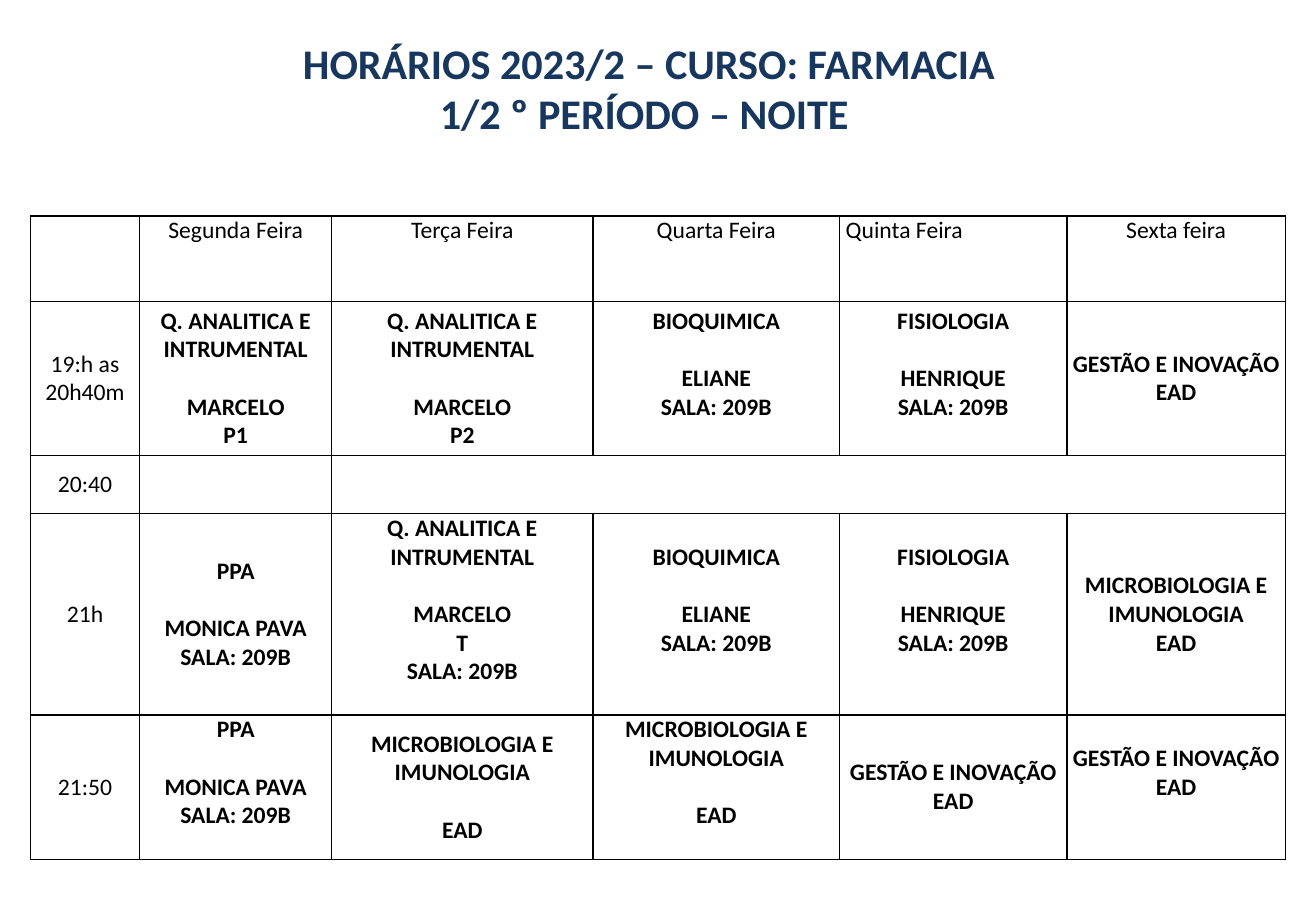
from lxml import etree
from pptx import Presentation
from pptx.dml.color import RGBColor
from pptx.enum.text import MSO_ANCHOR, MSO_AUTO_SIZE, PP_ALIGN
from pptx.oxml.ns import qn
from pptx.util import Inches, Pt

LEFT, CENTER = PP_ALIGN.LEFT, PP_ALIGN.CENTER
TOP, MIDDLE = MSO_ANCHOR.TOP, MSO_ANCHOR.MIDDLE
NO_AUTOFIT = MSO_AUTO_SIZE.NONE

THEME = {
    "font": "Calibri",
    "title_color": "17375E",
    "text_color": "000000",
    "border_color": "000000",
    "title_size": Pt(25),
    "cell_size": Pt(14),
    "border_width": Pt(1),
    "line_gap": Pt(17),
}

COLUMN_WIDTHS = [0.9, 1.58, 2.15, 2.03, 1.87, 1.8]
ROW_HEIGHTS = [0.7, 1.27, 0.48, 1.65, 1.19]

# Recurring classes; a double line break separates subject and teacher
ANALITICA = "Q. ANALITICA E INTRUMENTAL\n\nMARCELO\n"
BIOQUIMICA = "BIOQUIMICA\n\nELIANE\nSALA: 209B"
FISIOLOGIA = "FISIOLOGIA\n\nHENRIQUE\nSALA: 209B"
PPA = "PPA\n\nMONICA PAVA\nSALA: 209B"
GESTAO = "GESTÃO E INOVAÇÃO\nEAD"
MICROBIOLOGIA = "MICROBIOLOGIA E IMUNOLOGIA"

SCHEDULE = [
    ["", "Segunda Feira", "Terça Feira", "Quarta Feira", "Quinta Feira", "Sexta feira"],
    ["19:h as 20h40m", ANALITICA + "P1", ANALITICA + "P2", BIOQUIMICA, FISIOLOGIA, GESTAO],
    ["20:40", "", "", "", "", ""],
    ["21h", PPA, ANALITICA + "T\nSALA: 209B", BIOQUIMICA, FISIOLOGIA, MICROBIOLOGIA + "\nEAD"],
    ["21:50", PPA, MICROBIOLOGIA + "\n\nEAD", MICROBIOLOGIA + "\n\nEAD", GESTAO, GESTAO],
]
# Cells (row, column) whose text sits one line above the bottom
RAISED_CELLS = {(1, 3), (1, 4), (3, 2), (3, 3), (3, 4), (4, 1), (4, 3), (4, 5)}


def format_paragraph(paragraph, size, color, bold, alignment):
    paragraph.alignment = alignment
    for run in paragraph.runs:
        run.font.name = THEME["font"]
        run.font.size = size
        run.font.bold = bold
        run.font.color.rgb = RGBColor.from_string(color)


def add_borders(cell):
    properties = cell._tc.get_or_add_tcPr()
    for side in ("lnL", "lnR", "lnT", "lnB"):
        line = etree.SubElement(properties, qn("a:" + side), w=str(THEME["border_width"]))
        fill = etree.SubElement(line, qn("a:solidFill"))
        etree.SubElement(fill, qn("a:srgbClr"), val=THEME["border_color"])


presentation = Presentation()
presentation.slide_width = Inches(10.83)
presentation.slide_height = Inches(7.5)
slide = presentation.slides.add_slide(presentation.slide_layouts[5])

# Title
title = slide.shapes.title
title.left, title.top = Inches(0.3), Inches(0.25)
title.width, title.height = Inches(10.08), Inches(0.94)
title_frame = title.text_frame
title_frame.text = "HORÁRIOS 2023/2 – CURSO: FARMACIA\n1/2 º PERÍODO – NOITE "
title_frame.auto_size = NO_AUTOFIT
title_frame.vertical_anchor = MIDDLE
for paragraph in title_frame.paragraphs:
    format_paragraph(paragraph, THEME["title_size"], THEME["title_color"], True, CENTER)

# Timetable grid
table = slide.shapes.add_table(
    len(ROW_HEIGHTS), len(COLUMN_WIDTHS), Inches(0.25), Inches(1.78),
    Inches(sum(COLUMN_WIDTHS)), Inches(sum(ROW_HEIGHTS))).table
table.first_row = False
table.horz_banding = False
for column, width in zip(table.columns, COLUMN_WIDTHS):
    column.width = Inches(width)
for row, height in zip(table.rows, ROW_HEIGHTS):
    row.height = Inches(height)

# Timetable cells
for row_index, row_texts in enumerate(SCHEDULE):
    for column_index, text in enumerate(row_texts):
        cell = table.cell(row_index, column_index)
        cell.margin_left = cell.margin_right = Inches(0.05)
        cell.margin_top = cell.margin_bottom = 0
        if (row_index, column_index) in RAISED_CELLS:
            cell.margin_bottom = THEME["line_gap"]
        cell.vertical_anchor = MIDDLE if row_index else TOP
        add_borders(cell)
        cell.fill.background()

        blocks = text.split("\n\n")
        cell.text_frame.text = "\n".join(blocks)
        bold = row_index > 0 and column_index > 0
        alignment = LEFT if text == "Quinta Feira" else CENTER
        for paragraph in cell.text_frame.paragraphs:
            format_paragraph(paragraph, THEME["cell_size"], THEME["text_color"], bold, alignment)
        if len(blocks) > 1:
            cell.text_frame.paragraphs[1].space_before = THEME["line_gap"]

# Break row spans Tuesday to Friday
table.cell(2, 2).merge(table.cell(2, 5))

presentation.save("out.pptx")
